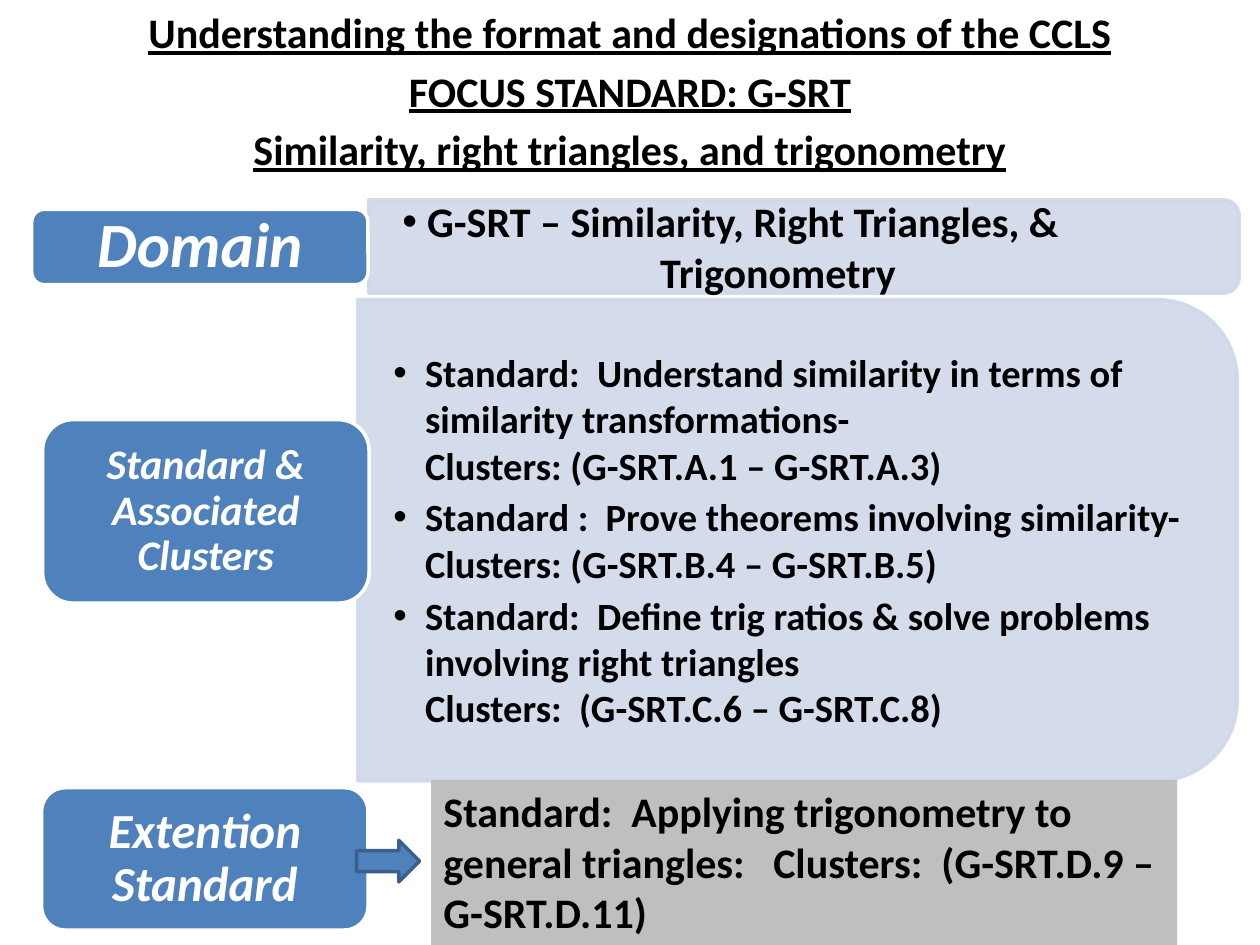
from lxml.etree import SubElement
from pptx import Presentation
from pptx.dml.color import RGBColor
from pptx.enum.shapes import MSO_SHAPE as Shape
from pptx.enum.text import MSO_ANCHOR as Anchor, PP_ALIGN as Align
from pptx.oxml.ns import qn
from pptx.util import Cm, Pt

BLUE, PALE, GRAY = "4F81BD", "D0D8E8", "BFBFBF"
WHITE, BLACK, EDGE = "FFFFFF", "000000", "3A5F8C"

TITLE = [
    "Understanding the format and designations of the CCLS",
    "FOCUS STANDARD: G-SRT",
    "Similarity, right triangles, and trigonometry",
]
DOMAIN = ["G-SRT – Similarity, Right Triangles, &", "Trigonometry"]
GOALS = [
    "Standard:  Understand similarity in terms of similarity transformations-"
    "\vClusters: (G-SRT.A.1 – G-SRT.A.3)",
    "Standard :  Prove theorems involving similarity-"
    "\vClusters: (G-SRT.B.4 – G-SRT.B.5)",
    "Standard:  Define trig ratios & solve problems involving right triangles"
    "\vClusters:  (G-SRT.C.6 – G-SRT.C.8)",
]
EXTRA = ("Standard:  Applying trigonometry to general triangles:   "
         "Clusters:  (G-SRT.D.9 – G-SRT.D.11)")

# Boxes are left, top, width, height in cm
LABELS = [
    ("Domain", 36, (0.64, 4.22, 6.78, 1.52)),
    ("Standard & Associated Clusters", 24, (0.86, 8.46, 6.58, 3.7)),
    ("Extention Standard", 28, (0.84, 15.88, 6.58, 2.87)),
]
PANELS = [(7.43, 4.03, 17.55, 1.88), (7.21, 6.04, 17.73, 9.7)]
DOMAIN_BOX = (7.42, 4.11, 17.45, 1.7)
GOAL_BOX = (7.24, 6.5, 17.27, 8.76)
EXTRA_BOX = (8.69, 15.72, 15.04, 3.33)
ARROW_BOX = (7.19, 16.94, 1.27, 0.84)


def rgb(code):
    return RGBColor.from_string(code)


def style(para, size, color=BLACK, **marks):
    for run in para.runs:
        font = run.font
        font.name, font.size, font.bold = "Calibri", Pt(size), True
        font.color.rgb = rgb(color)
        for key, val in marks.items():
            setattr(font, key, val)


def fade(fill):
    """Make a solid fill 90% opaque."""
    node = fill._xPr.find(qn("a:solidFill"))[0]
    SubElement(node, qn("a:alpha")).set("val", "90000")


def draw(slide, kind, box, fill, line=None):
    shape = slide.shapes.add_shape(kind, *map(Cm, box))
    shape.shadow.inherit = False
    shape.fill.solid()
    shape.fill.fore_color.rgb = rgb(fill)
    if line:
        shape.line.color.rgb = rgb(line)
        shape.line.width = Pt(2)
    else:
        shape.line.fill.background()
    return shape


def panel(slide, box):
    """Draw a pale block with its right corners rounded, by a quarter turn."""
    x, y, w, h = box
    turned = (x + (w - h) / 2, y + (h - w) / 2, h, w)
    shape = draw(slide, Shape.ROUND_2_SAME_RECTANGLE, turned, PALE, PALE)
    shape.rotation = 90
    fade(shape.fill)
    fade(shape.line.fill)


def indent(para, left, hang=0, mark=None):
    props = para._p.get_or_add_pPr()
    props.set("marL", str(Cm(left)))
    props.set("indent", str(-Cm(hang)))
    if mark:
        SubElement(props, qn("a:buFont")).set("typeface", "Arial")
        SubElement(props, qn("a:buChar")).set("char", mark)


def write(slide, box, lines, size):
    """Add a middle-anchored text box and return its paragraphs."""
    frame = slide.shapes.add_textbox(*map(Cm, box)).text_frame
    frame.word_wrap = True
    frame.vertical_anchor = Anchor.MIDDLE
    frame.margin_left = frame.margin_right = Cm(0.69)
    frame.margin_top = frame.margin_bottom = Cm(0)
    for i, line in enumerate(lines):
        para = frame.paragraphs[0] if i == 0 else frame.add_paragraph()
        para.text = line
        style(para, size)
    return frame.paragraphs


def head(slide):
    title = slide.shapes.title
    title.left, title.top, title.width, title.height = map(
        Cm, (0, 0, 25.4, 3.8))
    frame = title.text_frame
    frame.text = "\n".join(TITLE)
    frame.vertical_anchor = Anchor.TOP
    for i, para in enumerate(frame.paragraphs):
        para.alignment = Align.CENTER
        para.space_before = Pt(4.8 if i else 0)
        style(para, 24, underline=True)


def label(slide, text, size, box):
    shape = draw(slide, Shape.ROUNDED_RECTANGLE, box, BLUE, WHITE)
    frame = shape.text_frame
    frame.word_wrap = True
    frame.vertical_anchor = Anchor.MIDDLE
    frame.text = text
    para = frame.paragraphs[0]
    para.alignment = Align.CENTER
    para.line_spacing = 0.9
    style(para, size, WHITE, italic=True)


def main():
    prs = Presentation()
    prs.slide_width, prs.slide_height = Cm(25.4), Cm(19.05)
    slide = prs.slides.add_slide(prs.slide_layouts[5])
    head(slide)

    for box in PANELS:
        panel(slide, box)
    first, second = write(slide, DOMAIN_BOX, DOMAIN, 24)
    indent(first, 0.5, 0.5, "•")
    indent(second, 5.2)
    for para in write(slide, GOAL_BOX, GOALS, 22):
        indent(para, 0.64, 0.64, "•")
        para.space_after = Pt(3.3)
    for item in LABELS:
        label(slide, *item)

    extra = draw(slide, Shape.RECTANGLE, EXTRA_BOX, GRAY).text_frame
    extra.word_wrap = True
    extra.vertical_anchor = Anchor.TOP
    extra.text = EXTRA
    extra.paragraphs[0].alignment = Align.LEFT
    style(extra.paragraphs[0], 24)
    draw(slide, Shape.RIGHT_ARROW, ARROW_BOX, BLUE, EDGE)
    prs.save("out.pptx")


if __name__ == "__main__":
    main()
